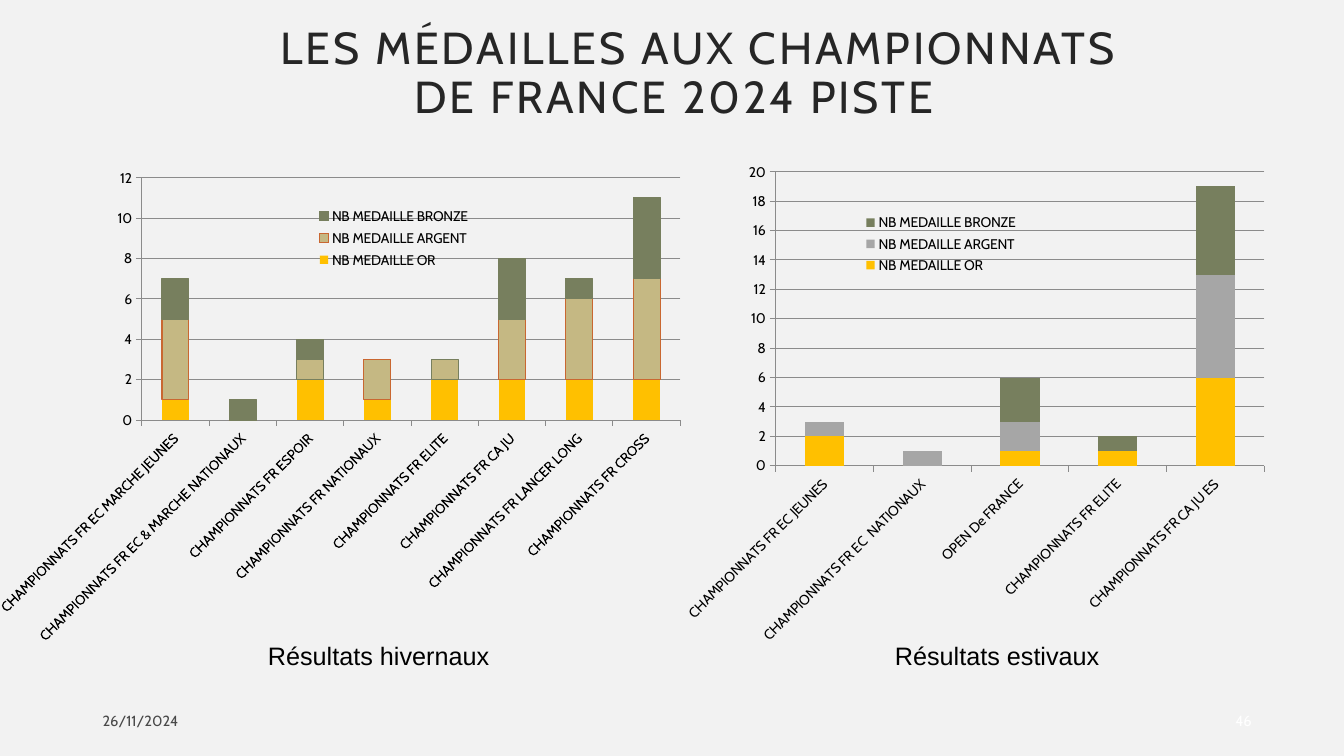
from collections import namedtuple
from dataclasses import dataclass

from lxml.etree import SubElement
from pptx import Presentation
from pptx.chart.data import CategoryChartData
from pptx.dml.color import RGBColor
from pptx.enum.chart import XL_CHART_TYPE, XL_LEGEND_POSITION, XL_TICK_MARK
from pptx.enum.text import MSO_ANCHOR, PP_ALIGN
from pptx.oxml.ns import qn
from pptx.util import Inches, Pt

COLUMNS, ROWS = 40, 30
SLIDE_WIDTH, SLIDE_HEIGHT = Inches(13.33), Inches(7.5)
Box = namedtuple("Box", "column row columns rows")
Frame = namedtuple("Frame", "x y w h")


@dataclass(frozen=True)
class Theme:
    """Colours, fonts and type sizes of the slide."""
    background: str = "F2F2F2"
    title: str = "262626"
    text: str = "000000"
    date: str = "494949"
    number: str = "FFFFFF"
    axis: str = "8B8B8B"
    gold: str = "FFC000"
    sand: str = "C5B883"
    silver: str = "A6A6A6"
    bronze: str = "777F5E"
    outline: str = "C96731"
    main_font: str = "Cabin"
    caption_font: str = "Arial"
    title_size: float = 32
    caption_size: float = 18
    footer_size: float = 10.5
    chart_size: float = 10


THEME = Theme()
MEDALS = ("NB MEDAILLE OR", "NB MEDAILLE ARGENT", "NB MEDAILLE BRONZE")

WINTER = {
    "results": {
        "CHAMPIONNATS FR EC MARCHE JEUNES": (1, 4, 2),
        "CHAMPIONNATS FR EC & MARCHE NATIONAUX": (0, 0, 1),
        "CHAMPIONNATS FR ESPOIR": (2, 1, 1),
        "CHAMPIONNATS FR NATIONAUX": (1, 2, 0),
        "CHAMPIONNATS FR ELITE": (2, 1, 0),
        "CHAMPIONNATS FR CA JU": (2, 3, 3),
        "CHAMPIONNATS FR LANCER LONG": (2, 4, 1),
        "CHAMPIONNATS FR CROSS": (2, 5, 4),
    },
    "fills": (THEME.gold, THEME.sand, THEME.bronze),
    "outlines": (None, THEME.outline, THEME.bronze),
    "olive_points": (2, 4),
    "plot": Frame(0.193, 0.018, 0.752, 0.512),
    "legend": Frame(0.43, 0.07, 0.23, 0.15),
    "top": 12,
}
SUMMER = {
    "results": {
        "CHAMPIONNATS FR EC JEUNES": (2, 1, 0),
        "CHAMPIONNATS FR EC  NATIONAUX": (0, 1, 0),
        "OPEN De FRANCE": (1, 2, 3),
        "CHAMPIONNATS FR ELITE": (1, 0, 1),
        "CHAMPIONNATS FR CA JU ES": (6, 7, 6),
    },
    "fills": (THEME.gold, THEME.silver, THEME.bronze),
    "outlines": (None, None, None),
    "olive_points": (),
    "plot": Frame(0.199, 0.032, 0.801, 0.603),
    "legend": Frame(0.33, 0.11, 0.28, 0.14),
    "top": 20,
}


def place(box):
    """Turn a grid box into left, top, width and height."""
    column, row = SLIDE_WIDTH / COLUMNS, SLIDE_HEIGHT / ROWS
    return (round(box.column * column), round(box.row * row),
            round(box.columns * column), round(box.rows * row))


def apply(target, formats):
    """Set each attribute of the target from a dict."""
    for name, value in formats.items():
        setattr(target, name, value)


def style_font(font, name, size, color):
    """Set a font's face, size and colour."""
    apply(font, {"name": name, "size": Pt(size), "bold": False})
    font.color.rgb = RGBColor.from_string(color)


def add_title(slide, box, wording):
    """Move, fill and format the title placeholder."""
    title = slide.shapes.title
    apply(title, dict(zip(("left", "top", "width", "height"), place(box))))
    apply(title.text_frame, {"text": wording, "word_wrap": True,
                             "vertical_anchor": MSO_ANCHOR.MIDDLE})
    heading = title.text_frame.paragraphs[0]
    apply(heading, {"alignment": PP_ALIGN.CENTER, "line_spacing": 0.9})
    properties = heading._p.get_or_add_pPr()
    properties.set("marL", str(Inches(1.5)))
    properties.set("indent", str(Inches(0.5)))
    run = heading.runs[0]
    style_font(run.font, THEME.main_font, THEME.title_size, THEME.title)
    run.font._element.set("spc", "200")


def add_label(slide, box, wording, font, size, color,
              align=PP_ALIGN.LEFT, anchor=MSO_ANCHOR.MIDDLE):
    """Add one line of text in the given box."""
    frame = slide.shapes.add_textbox(*place(box)).text_frame
    apply(frame, {"text": wording, "word_wrap": True, "vertical_anchor": anchor})
    line = frame.paragraphs[0]
    line.alignment = align
    style_font(line.runs[0].font, font, size, color)


def set_layout(element, index, frame, inner=False):
    """Fix the position of a chart part as shares of the chart."""
    for former in element.findall(qn("c:layout")):
        element.remove(former)
    layout = element.makeelement(qn("c:layout"), {})
    element.insert(index, layout)
    manual = SubElement(layout, qn("c:manualLayout"))
    entries = [("layoutTarget", "inner")] if inner else []
    entries += [("xMode", "edge"), ("yMode", "edge")]
    entries += frame._asdict().items()
    for tag, value in entries:
        SubElement(manual, qn(f"c:{tag}"), val=str(value))


def style_series(series, fill, outline, olive_points):
    """Colour one medal's bars and their outlines."""
    series.format.fill.solid()
    series.format.fill.fore_color.rgb = RGBColor.from_string(fill)
    lines = [(series.format.line, outline)] if outline else []
    for index in olive_points:
        point = series.points[index].format
        point.fill.solid()
        point.fill.fore_color.rgb = RGBColor.from_string(fill)
        lines.append((point.line, THEME.bronze))
    for line, color in lines:
        line.color.rgb = RGBColor.from_string(color)
        line.width = Pt(0.75)


def style_axes(chart, top):
    """Format both axes, with slanted category labels."""
    category, value = chart.category_axis, chart.value_axis
    apply(value, {"minimum_scale": 0, "maximum_scale": top, "major_unit": 2,
                  "has_major_gridlines": True})
    for axis in (category, value):
        apply(axis, {"major_tick_mark": XL_TICK_MARK.OUTSIDE,
                     "minor_tick_mark": XL_TICK_MARK.NONE})
        style_font(axis.tick_labels.font, THEME.main_font, THEME.chart_size, THEME.text)
    for line in (category.format.line, value.format.line,
                 value.major_gridlines.format.line):
        line.color.rgb = RGBColor.from_string(THEME.axis)
        line.width = Pt(0.75)
    slant = category._element.find(f"{qn('c:txPr')}/{qn('a:bodyPr')}")
    slant.set("rot", "-2700000")
    slant.set("vert", "horz")


def add_medal_chart(slide, box, season):
    """Add the stacked medal chart of one season."""
    data = CategoryChartData()
    data.categories = list(season["results"])
    for medal, counts in zip(MEDALS, zip(*season["results"].values())):
        data.add_series(medal, counts)
    chart = slide.shapes.add_chart(
        XL_CHART_TYPE.COLUMN_STACKED, *place(box), data).chart
    apply(chart, {"has_title": False, "has_legend": True})
    style_font(chart.font, THEME.main_font, THEME.chart_size, THEME.text)
    bars = chart.plots[0]
    apply(bars, {"gap_width": 150, "overlap": 100, "vary_by_categories": False})
    for rank, series in enumerate(bars.series):
        style_series(series, season["fills"][rank], season["outlines"][rank],
                     season["olive_points"] if rank == 1 else ())
    style_axes(chart, season["top"])
    apply(chart.legend, {"position": XL_LEGEND_POSITION.RIGHT, "include_in_layout": False})
    style_font(chart.legend.font, THEME.main_font, THEME.chart_size, THEME.text)
    set_layout(chart.legend._element, 1, season["legend"])
    set_layout(chart._chartSpace.chart.plotArea, 0, season["plot"], inner=True)


def main():
    """Build the medal slide and save it."""
    deck = Presentation()
    apply(deck, {"slide_width": SLIDE_WIDTH, "slide_height": SLIDE_HEIGHT})
    slide = deck.slides.add_slide(deck.slide_layouts[5])
    slide.background.fill.solid()
    slide.background.fill.fore_color.rgb = RGBColor.from_string(THEME.background)
    add_title(slide, Box(1.62, 0.68, 32.4, 4.56),
              "LES MÉDAILLES AUX CHAMPIONNATS DE FRANCE 2024 PISTE")
    add_medal_chart(slide, Box(-0.09, 6.72, 21.51, 18.84), WINTER)
    add_medal_chart(slide, Box(19.47, 6.2, 18.18, 19.36), SUMMER)
    for column, season in ((7.68, "hivernaux"), (26.34, "estivaux")):
        add_label(slide, Box(column, 25.2, 7.53, 1.6), f"Résultats {season}",
                  THEME.caption_font, THEME.caption_size, THEME.text,
                  anchor=MSO_ANCHOR.TOP)
    add_label(slide, Box(2.76, 27.8, 9, 1.6), "26/11/2024",
              THEME.main_font, THEME.footer_size, THEME.date)
    add_label(slide, Box(34.8, 27.8, 2.75, 1.6), "46", THEME.main_font,
              THEME.footer_size, THEME.number, align=PP_ALIGN.RIGHT)
    deck.save("out.pptx")


if __name__ == "__main__":
    main()
